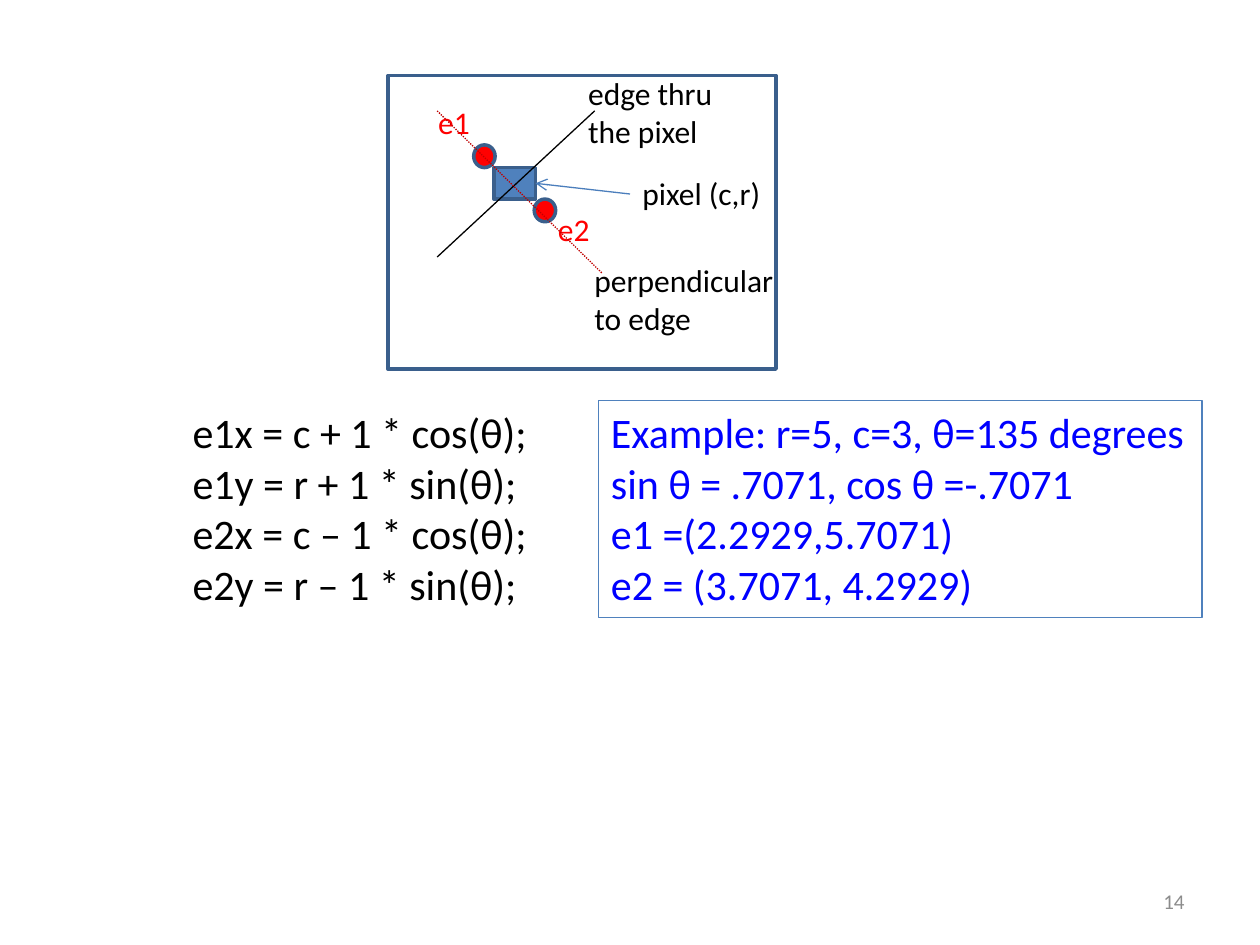
"""Build a slide on finding the two points beside an edge pixel."""
from dataclasses import dataclass
from typing import Optional

from lxml import etree
from pptx import Presentation
from pptx.dml.color import RGBColor
from pptx.enum import dml, shapes, text
from pptx.oxml import ns
from pptx.util import Inches, Pt

COLORS = {
    "black": "000000", "red": "FF0000", "dark red": "C00000", "blue": "0000FF",
    "pixel": "4F81BD", "outline": "3A5F8C", "arrow": "4B7EBC", "gray": "8C8C8C",
}
FONT = "Calibri"


@dataclass
class Figure:
    kind: shapes.MSO_SHAPE
    left: float
    top: float
    width: float
    height: float
    fill: Optional[str] = None


@dataclass
class Label:
    lines: list[str]
    left: float
    top: float
    width: float
    height: float
    color: str = "black"
    size: int = 18
    border: Optional[str] = None


@dataclass
class Line:
    start: tuple[float, float]
    end: tuple[float, float]
    color: str


FRAME = Figure(shapes.MSO_SHAPE.RECTANGLE, 3.08, 0.6, 3.08, 2.33)
PIXEL = Figure(shapes.MSO_SHAPE.RECTANGLE, 3.92, 1.33, 0.33, 0.25, "pixel")
DOTS = [
    Figure(shapes.MSO_SHAPE.OVAL, left, top, 0.17, 0.18, "red")
    for left, top in ((3.76, 1.15), (4.24, 1.58))
]
EDGE = Line((3.47, 2.04), (4.72, 0.88), "black")
PERPENDICULAR = Line((3.47, 0.88), (4.78, 2.17), "dark red")
POINTER = Line((5, 1.54), (4.25, 1.46), "arrow")
FORMULAS = [
    "e1x = c + 1 * cos(θ);", "e1y = r + 1 * sin(θ);",
    "e2x = c – 1 * cos(θ);", "e2y = r – 1 * sin(θ);",
]
EXAMPLE = [
    "Example: r=5, c=3, θ=135 degrees", "sin θ = .7071, cos θ =-.7071",
    "e1 =(2.2929,5.7071)", "e2 = (3.7071, 4.2929)",
]
LABELS = [
    Label(FORMULAS, 1.43, 3.18, 2.88, 1.72, size=24),
    Label(["e1"], 3.38, 0.77, 0.46, 0.4, "red"),
    Label(["e2"], 4.33, 1.62, 0.46, 0.4, "red"),
    Label(EXAMPLE, 4.75, 3.18, 4.79, 1.72, "blue", 24, "pixel"),
    Label(["pixel (c,r)"], 5, 1.33, 1.15, 0.4),
    Label(["edge thru", "the pixel"], 4.57, 0.54, 1.2, 0.71),
    Label(["perpendicular", "to edge"], 4.62, 2.02, 1.64, 0.71),
]
PAGE_NUMBER = Label(["14"], 7.17, 6.95, 2.33, 0.4, "gray", 12)


def rgb(name: str) -> RGBColor:
    """Return the named colour."""
    return RGBColor.from_string(COLORS[name])


def set_line(line, color: str, width: float) -> None:
    """Give a line its colour and width in points."""
    line.color.rgb = rgb(color)
    line.width = Pt(width)


def draw_figure(page, figure: Figure):
    """Draw an outlined preset shape."""
    shape = page.shapes.add_shape(
        figure.kind, Inches(figure.left), Inches(figure.top),
        Inches(figure.width), Inches(figure.height))
    shape.shadow.inherit = False
    if figure.fill:
        shape.fill.solid()
        shape.fill.fore_color.rgb = rgb(figure.fill)
    else:
        shape.fill.background()
    set_line(shape.line, "outline", 2)
    return shape


def draw_label(page, label: Label):
    """Draw a text box with one paragraph per line."""
    box = page.shapes.add_textbox(
        Inches(label.left), Inches(label.top), Inches(label.width), Inches(label.height))
    if label.border:
        set_line(box.line, label.border, 0.75)
    frame = box.text_frame
    frame.word_wrap = False
    frame.auto_size = text.MSO_AUTO_SIZE.SHAPE_TO_FIT_TEXT
    style = {"name": FONT, "size": Pt(label.size)}
    for index, words in enumerate(label.lines):
        para = frame.add_paragraph() if index else frame.paragraphs[0]
        span = para.add_run()
        span.text = words
        for name, value in style.items():
            setattr(span.font, name, value)
        span.font.color.rgb = rgb(label.color)
    return box


def draw_line(page, line: Line):
    """Draw a thin straight connector without a shadow."""
    connector = page.shapes.add_connector(
        shapes.MSO_CONNECTOR.STRAIGHT, *map(Inches, line.start + line.end))
    set_line(connector.line, line.color, 0.75)
    etree.SubElement(connector._element.spPr, ns.qn("a:effectLst"))
    return connector


def draw_page_number(page) -> None:
    """Draw the right-aligned page number."""
    frame = draw_label(page, PAGE_NUMBER).text_frame
    settings = {
        "word_wrap": True,
        "auto_size": text.MSO_AUTO_SIZE.NONE,
        "vertical_anchor": text.MSO_ANCHOR.MIDDLE,
    }
    for name, value in settings.items():
        setattr(frame, name, value)
    frame.paragraphs[0].alignment = text.PP_ALIGN.RIGHT


def main() -> None:
    """Draw the slide and save it."""
    deck = Presentation()
    deck.slide_width, deck.slide_height = Inches(10), Inches(7.5)
    page = deck.slides.add_slide(deck.slide_layouts[6])
    draw_figure(page, FRAME)
    pixel = draw_figure(page, PIXEL)
    draw_line(page, EDGE)
    for dot in DOTS:
        draw_figure(page, dot)
    for label in LABELS:
        draw_label(page, label)
    perpendicular = draw_line(page, PERPENDICULAR)
    perpendicular.line.dash_style = dml.MSO_LINE.ROUND_DOT
    pointer = draw_line(page, POINTER)
    pointer.end_connect(pixel, 3)
    outline = pointer.line._get_or_add_ln()
    etree.SubElement(outline, ns.qn("a:tailEnd"), type="arrow")
    draw_page_number(page)
    deck.save("out.pptx")


if __name__ == "__main__":
    main()
